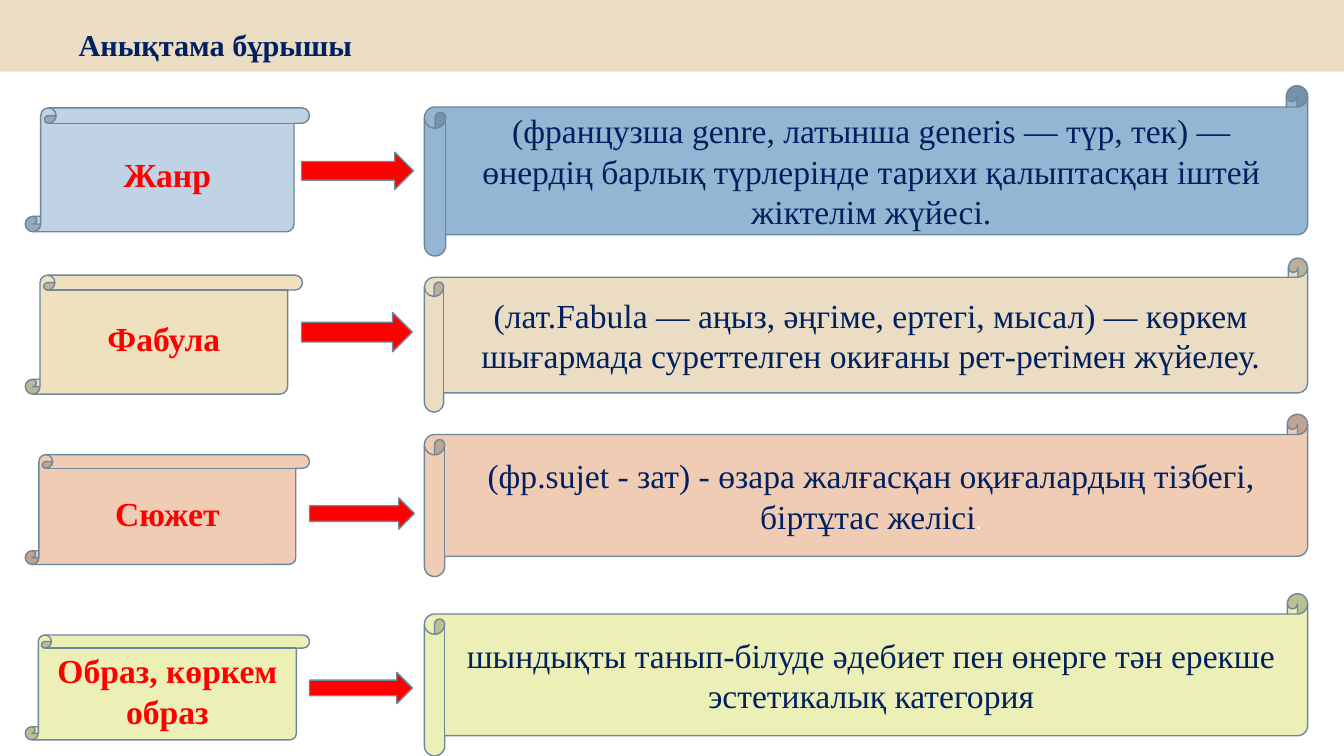
from pptx import Presentation
from pptx import util as u
from pptx.dml.color import RGBColor
from pptx.enum import shapes, text

NAVY, RED, OUTLINE = "002060", "FF0000", "6D879B"
SERIF = "Times New Roman"


def add_box(kind, left, top, width, height, fill, line=OUTLINE):
    box = page.shapes.add_shape(kind, *map(u.Inches, (left, top, width, height)))
    box.shadow.inherit = False
    box.fill.solid()
    box.fill.fore_color.rgb = RGBColor.from_string(fill)
    if line:
        box.line.color.rgb = RGBColor.from_string(line)
        box.line.width = u.Pt(1)
    else:
        box.line.fill.background()
    return box


def write(box, words, color, size=24, bold=False, align=text.PP_ALIGN.CENTER):
    frame = box.text_frame
    frame.word_wrap = True
    frame.vertical_anchor = text.MSO_ANCHOR.MIDDLE
    frame.text = words
    para = frame.paragraphs[0]
    para.alignment = align
    font = para.runs[0].font
    font.name, font.size, font.bold = SERIF, u.Pt(size), bold
    font.color.rgb = RGBColor.from_string(color)
    return para


deck = Presentation()
deck.slide_width, deck.slide_height = u.Inches(13.33), u.Inches(7.5)
page = deck.slides.add_slide(deck.slide_layouts[6])

# Title band
band = add_box(shapes.MSO_SHAPE.RECTANGLE, 0, 0, 13.33, 0.71, "EBDDC3", line=None)
write(band, "Анықтама бұрышы", NAVY, 21.6, True, text.PP_ALIGN.LEFT)
band.text_frame.margin_left = u.Inches(0.78)
band.text_frame.margin_top = u.Inches(0.17)
band.text_frame.margin_bottom = 0

# Each row: term, (top, width, height, fill), definition,
# (top, height, fill), arrow (left, top, width, height)
rows = [
    ("Жанр", (1.07, 2.82, 1.23, "BFD3E4"),
     "(французша genre, латынша generіs — түр, тек) — өнердің барлық "
     "түрлерінде тарихи қалыптасқан іштей жіктелім жүйесі.",
     (0.85, 1.69, "94B6D2"), (2.99, 1.51, 1.11, 0.37)),
    ("Фабула", (2.73, 2.75, 1.18, "EFE0BE"),
     "(лат.Fabula — аңыз, әңгіме, ертегі, мысал) — көркем шығармада "
     "суреттелген окиғаны рет-ретімен жүйелеу.",
     (2.56, 1.53, "EBDDC3"), (2.99, 3.1, 1.1, 0.39)),
    ("Сюжет", (4.51, 2.82, 1.09, "F1CCB5"),
     "(фр.sujet - зат) - өзара жалғасқан оқиғалардың тізбегі, біртұтас желісі",
     (4.11, 1.61, "F1CCB5"), (3.07, 4.94, 1.04, 0.31)),
    ("Образ, көркем образ", (6.3, 2.82, 1.04, "ECF0B6"),
     "шындықты танып-білуде әдебиет пен өнерге тән ерекше эстетикалық категория",
     (5.89, 1.61, "ECF0B6"), (3.07, 6.67, 1.02, 0.31)),
]

# Term scroll, definition scroll and the arrow between them
for term, term_place, definition, (top, height, fill), arrow in rows:
    term_box = add_box(shapes.MSO_SHAPE.VERTICAL_SCROLL, 0.25, *term_place)
    write(term_box, term, RED, bold=True)
    definition_box = add_box(shapes.MSO_SHAPE.HORIZONTAL_SCROLL,
                             4.21, top, 8.76, height, fill)
    para = write(definition_box, definition, NAVY)
    if term == "Сюжет":
        # White full stop in a smaller font
        span = para.add_run()
        span.text = "."
        span.font.name, span.font.size = "Calibri", u.Pt(18)
        span.font.color.rgb = RGBColor.from_string("FFFFFF")
    add_box(shapes.MSO_SHAPE.RIGHT_ARROW, *arrow, RED)

deck.save("out.pptx")
